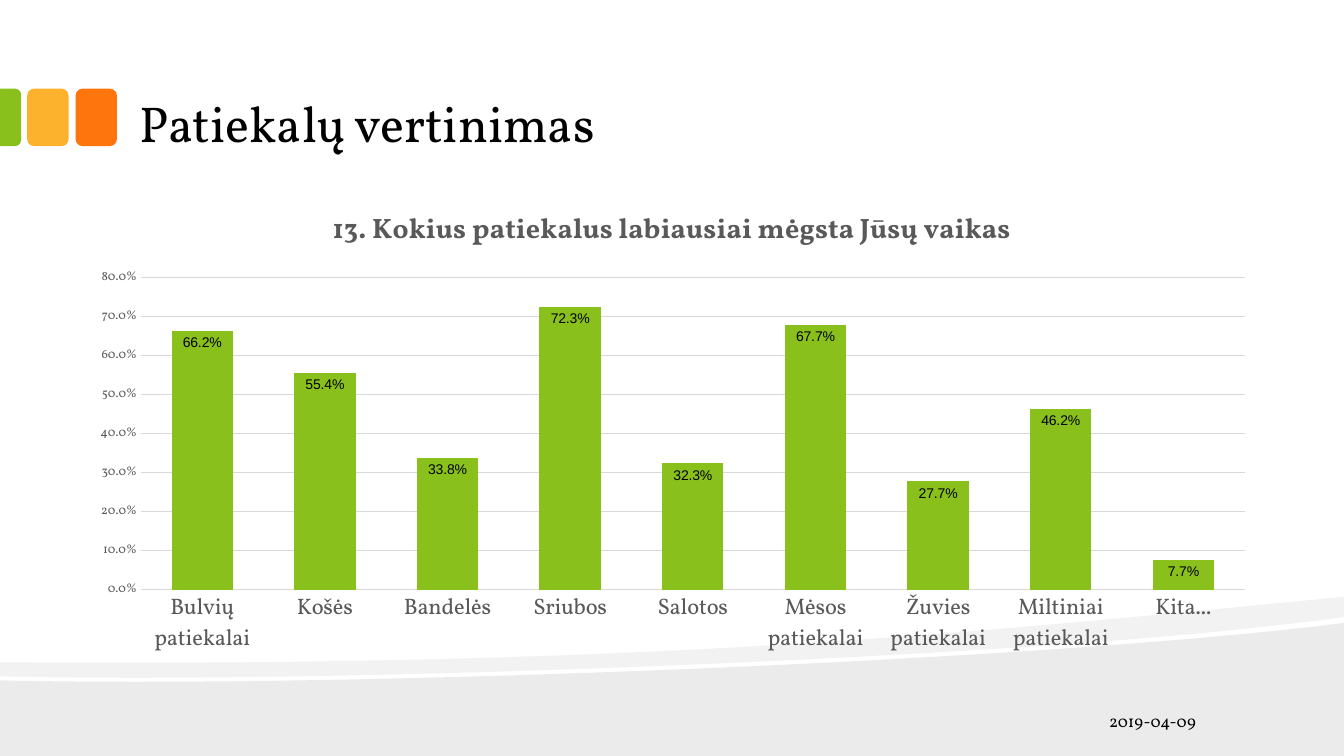
from lxml import etree
from pptx import Presentation
from pptx.chart.data import CategoryChartData
from pptx.dml.color import RGBColor
from pptx.enum.chart import XL_CHART_TYPE, XL_LABEL_POSITION, XL_TICK_MARK
from pptx.enum.shapes import MSO_SHAPE
from pptx.enum.text import MSO_ANCHOR, PP_ALIGN
from pptx.oxml.ns import qn
from pptx.util import Inches, Pt

COLUMNS = XL_CHART_TYPE.COLUMN_CLUSTERED
INSIDE_END = XL_LABEL_POSITION.INSIDE_END
NO_TICK = XL_TICK_MARK.NONE
ROUNDED = MSO_SHAPE.ROUNDED_RECTANGLE
ROUNDED_TOP = MSO_SHAPE.ROUND_2_SAME_RECTANGLE
BOTTOM, MIDDLE = MSO_ANCHOR.BOTTOM, MSO_ANCHOR.MIDDLE
LEFT, RIGHT = PP_ALIGN.LEFT, PP_ALIGN.RIGHT

THEME = {
    "font": "Vollkorn", "label_font": "Arial",
    "black": RGBColor(0, 0, 0), "gray": RGBColor(0x59, 0x59, 0x59),
    "grid": RGBColor(0xD9, 0xD9, 0xD9),
    "green": RGBColor(0x89, 0xC0, 0x1C), "yellow": RGBColor(0xFC, 0xB2, 0x2C),
    "orange": RGBColor(0xFE, 0x75, 0x0E),
    "hill_opacity": "8000", "ridge_opacity": "5000",
    "heading": Pt(36), "chart_title": Pt(20), "category": Pt(16),
    "date": Pt(12), "label": Pt(10), "scale": Pt(9),
}


def paint(shape, color):
    shape.shadow.inherit = False
    shape.fill.solid()
    shape.fill.fore_color.rgb = color
    shape.line.fill.background()


def style(font, size, color, name=THEME["font"], bold=False):
    font.size, font.name, font.bold = size, name, bold
    font.color.rgb = color


presentation = Presentation()
presentation.slide_width = Inches(13.33)
presentation.slide_height = Inches(7.5)
slide = presentation.slides.add_slide(presentation.slide_layouts[6])

hill = [(13.33, 6.18), (13.33, 7.5), (0, 7.5), (0, 6.75),
        (3.52, 6.83), (10.42, 6.55), (13.33, 6.18)]
ridge = [(13.33, 5.92), (13.33, 6.12),
         (12.55, 6.23), (11.49, 6.33), (10.29, 6.41),
         (6.98, 6.63), (2.58, 6.77), (0, 6.71), (0, 6.57),
         (6.52, 6.62), (9.71, 6.27), (13.33, 5.92)]

for outline, curve_starts, opacity in ((hill, (4,), "hill_opacity"),
                                       (ridge, (2, 5, 9), "ridge_opacity")):
    points = [(Inches(x), Inches(y)) for x, y in outline]
    builder = slide.shapes.build_freeform(*points[0], scale=1.0)
    builder.add_line_segments(points[1:], close=True)
    wave = builder.convert_to_shape()
    paint(wave, THEME["black"])
    fill_color = wave.element.spPr.find(qn("a:solidFill"))[0]
    etree.SubElement(fill_color, qn("a:alpha")).set("val", THEME[opacity])
    contour = wave.element.find(".//" + qn("a:path"))
    segments = list(contour)
    for start in curve_starts:
        bend = etree.Element(qn("a:cubicBezTo"))
        segments[start].addprevious(bend)
        for segment in segments[start:start + 3]:
            bend.append(segment[0])
            contour.remove(segment)

for left, color in ((0.75, "orange"), (0.27, "yellow")):
    tile = slide.shapes.add_shape(ROUNDED, Inches(left), Inches(0.88), Inches(0.41), Inches(0.57))
    tile.adjustments[0] = 0.167
    paint(tile, THEME[color])

edge_tile = slide.shapes.add_shape(ROUNDED_TOP, Inches(-0.18), Inches(1.06), Inches(0.57), Inches(0.21))
edge_tile.rotation = 90
edge_tile.adjustments[0] = 0.292
paint(edge_tile, THEME["green"])

for text, box, size, anchor, align in (
    ("Patiekalų vertinimas", (1.25, 0.16, 10.66, 1.42), "heading", BOTTOM, LEFT),
    ("2019-04-09", (10.44, 7.05, 1.55, 0.2), "date", MIDDLE, RIGHT),
):
    frame = slide.shapes.add_textbox(*map(Inches, box)).text_frame
    frame.word_wrap = True
    frame.vertical_anchor = anchor
    frame.margin_left = frame.margin_right = Inches(0.13)
    frame.margin_top = frame.margin_bottom = Inches(0.07)
    frame.text = text
    frame.paragraphs[0].alignment = align
    style(frame.paragraphs[0].runs[0].font, THEME[size], THEME["black"])

question = "13. Kokius patiekalus labiausiai mėgsta Jūsų vaikas"
ratings = {
    "Bulvių patiekalai": 0.662, "Košės": 0.554, "Bandelės": 0.338,
    "Sriubos": 0.723, "Salotos": 0.323, "Mėsos patiekalai": 0.677,
    "Žuvies patiekalai": 0.277, "Miltiniai patiekalai": 0.462, "Kita...": 0.077,
}
chart_data = CategoryChartData(number_format="0.0%")
chart_data.categories = list(ratings)
chart_data.add_series(question, list(ratings.values()))
chart = slide.shapes.add_chart(COLUMNS, Inches(0.76), Inches(1.86), Inches(11.81),
                               Inches(4.73), chart_data).chart
style(chart.font, THEME["label"], THEME["black"], THEME["label_font"])
chart.has_legend = False
chart.has_title = True
chart.chart_title.text_frame.text = question
style(chart.chart_title.text_frame.paragraphs[0].runs[0].font,
      THEME["chart_title"], THEME["gray"], bold=True)

dishes = chart.category_axis
dishes.major_tick_mark = dishes.minor_tick_mark = NO_TICK
dishes.format.line.color.rgb = THEME["grid"]
dishes.format.line.width = Pt(1)
style(dishes.tick_labels.font, THEME["category"], THEME["gray"])

shares = chart.value_axis
shares.minimum_scale, shares.maximum_scale, shares.major_unit = 0, 0.8, 0.1
shares.major_tick_mark = shares.minor_tick_mark = NO_TICK
shares.format.line.fill.background()
shares.has_major_gridlines = True
shares.major_gridlines.format.line.color.rgb = THEME["grid"]
shares.major_gridlines.format.line.width = Pt(0.75)
shares.tick_labels.number_format = "###0.0%"
shares.tick_labels.number_format_is_linked = False
style(shares.tick_labels.font, THEME["scale"], THEME["gray"])

columns = chart.plots[0]
columns.gap_width, columns.overlap = 100, -24
columns.vary_by_categories = False
columns.series[0].format.fill.solid()
columns.series[0].format.fill.fore_color.rgb = THEME["green"]
columns.has_data_labels = True
labels = columns.data_labels
labels.show_value = True
labels.position = INSIDE_END
labels.number_format = "0.0%"
labels.number_format_is_linked = False
style(labels.font, THEME["label"], THEME["black"], THEME["label_font"])

plot_area = chart.element.find(".//" + qn("c:plotArea"))
for automatic in plot_area.findall(qn("c:layout")):
    plot_area.remove(automatic)
layout = etree.Element(qn("c:layout"))
manual = etree.SubElement(layout, qn("c:manualLayout"))
for tag, value in (("layoutTarget", "inner"), ("xMode", "edge"), ("yMode", "edge"),
                   ("x", "0.054"), ("y", "0.188"), ("w", "0.927"), ("h", "0.656")):
    etree.SubElement(manual, qn("c:" + tag)).set("val", value)
plot_area.insert(0, layout)

presentation.save("out.pptx")
